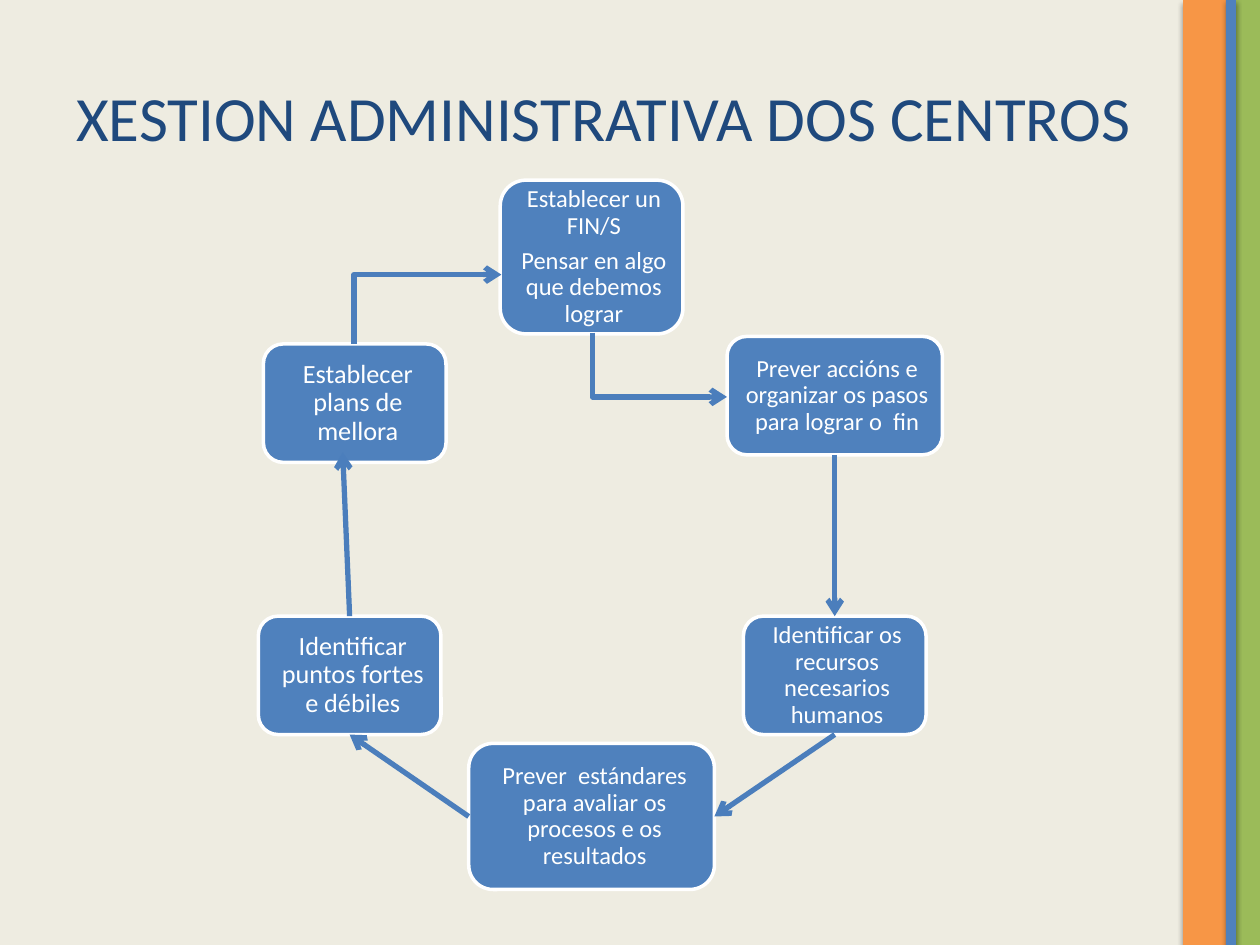
from lxml.etree import SubElement
from pptx import Presentation
from pptx.dml.color import RGBColor
from pptx.enum.shapes import MSO_CONNECTOR as CONN, MSO_SHAPE as SHAPE
from pptx.enum.text import MSO_ANCHOR, MSO_AUTO_SIZE, PP_ALIGN
from pptx.oxml import parse_xml
from pptx.oxml.ns import nsdecls, qn
from pptx.util import Inches, Pt

CREAM = RGBColor(0xEE, 0xEC, 0xE1)
NAVY = RGBColor(0x1F, 0x49, 0x7D)
BLUE = RGBColor(0x4F, 0x81, 0xBD)
ARROW_BLUE = RGBColor(0x4B, 0x7E, 0xBC)
ORANGE = RGBColor(0xF7, 0x96, 0x46)
GREEN = RGBColor(0x9B, 0xBB, 0x59)
WHITE = RGBColor(0xFF, 0xFF, 0xFF)
FONT = "Calibri"
TOP, LEFT, BOTTOM, RIGHT = range(4)

TITLE = "XESTION ADMINISTRATIVA DOS CENTROS"
BARS = [(9.39, 0.35, ORANGE), (9.81, 0.19, GREEN), (9.73, 0.08, BLUE)]
STEPS = {
    "fin": ((3.97, 1.43, 1.45, 1.22), 14, 0.1,
            ["Establecer un FIN/S", "Pensar en algo que debemos lograr"]),
    "accions": ((5.77, 2.67, 1.71, 0.94), 14, 0.1,
                ["Prever accións e organizar os pasos para lograr o  fin"]),
    "recursos": ((5.9, 4.89, 1.45, 0.94), 14, 0.1,
                 ["Identificar os recursos necesarios humanos"]),
    "estandares": ((3.72, 5.9, 1.95, 1.16), 14, 0.11,
                   ["Prever  estándares para avaliar os procesos e os resultados"]),
    "puntos": ((2.05, 4.89, 1.45, 0.94), 15, 0.11,
               ["Identificar puntos fortes e débiles"]),
    "plans": ((2.09, 2.73, 1.45, 0.94), 15, 0.11,
              ["Establecer plans de mellora"]),
}
JOINED = [("accions", BOTTOM, "recursos", TOP),
          ("recursos", BOTTOM, "estandares", RIGHT),
          ("estandares", LEFT, "puntos", BOTTOM)]
PLANS_ENTRY = (2.72, 3.59)
BENT = [((4.7, 2.64), (5.77, 3.15)), ((2.81, 2.73), (3.98, 2.18))]


def add_bar(slide, left, width, color):
    sp = slide.shapes.add_shape(SHAPE.RECTANGLE, Inches(left), 0,
                                Inches(width), Inches(7.5))
    sp.fill.solid()
    sp.fill.fore_color.rgb = color
    sp.line.fill.background()
    sp._element.spPr.append(parse_xml(
        f'<a:effectLst {nsdecls("a")}><a:outerShdw blurRad="{Pt(3.1)}" '
        f'dist="{Pt(1.6)}" dir="5400000" rotWithShape="0"><a:srgbClr val="000000">'
        '<a:alpha val="38000"/></a:srgbClr></a:outerShdw></a:effectLst>'))


def add_step(slide, box, size, inset, lines):
    sp = slide.shapes.add_shape(SHAPE.ROUNDED_RECTANGLE, *map(Inches, box))
    sp.shadow.inherit = False
    sp.fill.solid()
    sp.fill.fore_color.rgb = BLUE
    sp.line.color.rgb = WHITE
    sp.line.width = Pt(2)
    tf = sp.text_frame
    tf.word_wrap = True
    tf.vertical_anchor = MSO_ANCHOR.MIDDLE
    tf.margin_left = tf.margin_top = tf.margin_bottom = Inches(inset)
    tf.margin_right = Inches(0.06)
    tf.text = "\n".join(lines)
    for p in tf.paragraphs:
        p.alignment = PP_ALIGN.CENTER
        p.line_spacing = 0.9
        p.space_after = Pt(size * 0.35)
        p.font.size, p.font.name = Pt(size), FONT
        p.font.color.rgb = WHITE
    return sp


def add_arrow(slide, start=(0, 0), end=(0, 0)):
    cxn = slide.shapes.add_connector(CONN.STRAIGHT, *map(Inches, start + end))
    cxn.line.color.rgb = ARROW_BLUE
    cxn.line.width = Pt(3)
    SubElement(cxn.line._get_or_add_ln(), qn("a:tailEnd"), type="arrow")
    SubElement(cxn._element.spPr, qn("a:effectLst"))
    return cxn


def add_bent_arrow(slide, start, end):
    (x1, y1), (x2, y2) = start, end
    cxn = add_arrow(slide, start, end)
    width, height = abs(y2 - y1), abs(x2 - x1)
    cxn.left = Inches((x1 + x2 - width) / 2)
    cxn.top = Inches((y1 + y2 - height) / 2)
    cxn.width, cxn.height = Inches(width), Inches(height)
    down = y2 > y1
    xfrm = cxn._element.spPr.find(qn("a:xfrm"))
    xfrm.set("rot", "16200000" if down else "5400000")
    xfrm.set("flipH", "1")
    xfrm.set("flipV", "0" if down else "1")
    cxn._element.spPr.find(qn("a:prstGeom")).set("prst", "bentConnector2")


def main():
    prs = Presentation()
    prs.slide_width, prs.slide_height = Inches(10), Inches(7.5)
    slide = prs.slides.add_slide(prs.slide_layouts[5])
    slide.background.fill.solid()
    slide.background.fill.fore_color.rgb = CREAM

    title = slide.shapes.title
    title.left, title.top, title.width, title.height = map(
        Inches, (0.5, 0.3, 8.58, 1.25))
    tf = title.text_frame
    tf.text = TITLE
    tf.auto_size = MSO_AUTO_SIZE.NONE
    tf.vertical_anchor = MSO_ANCHOR.MIDDLE
    p = tf.paragraphs[0]
    p.alignment = PP_ALIGN.CENTER
    p.font.size, p.font.name = Pt(36), FONT
    p.font.color.rgb = NAVY

    for bar in BARS:
        add_bar(slide, *bar)
    steps = {name: add_step(slide, *step) for name, step in STEPS.items()}

    for source, source_side, target, target_side in JOINED:
        cxn = add_arrow(slide)
        cxn.begin_connect(steps[source], source_side)
        cxn.end_connect(steps[target], target_side)
    cxn = add_arrow(slide, end=PLANS_ENTRY)
    cxn.begin_connect(steps["puntos"], TOP)
    for start, end in BENT:
        add_bent_arrow(slide, start, end)

    prs.save("out.pptx")


if __name__ == "__main__":
    main()
